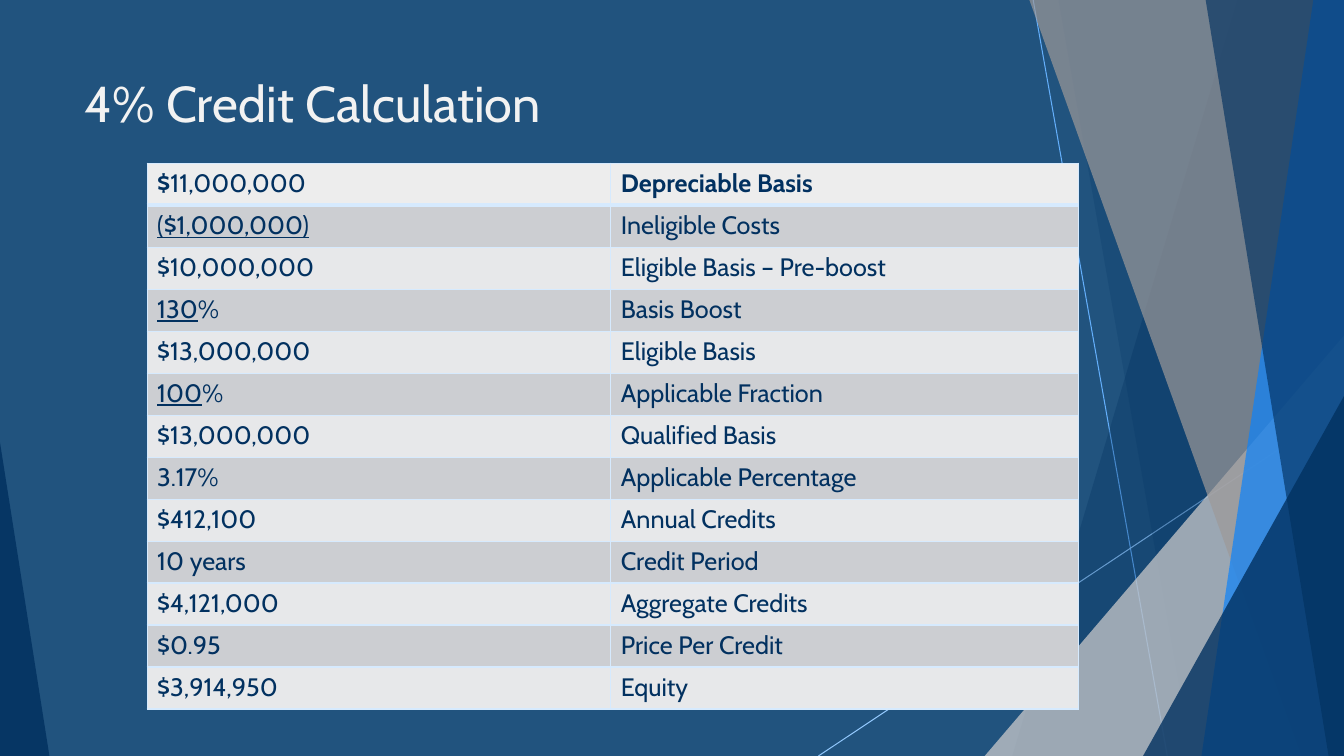
from lxml import etree
from pptx import Presentation
from pptx.dml.color import RGBColor
from pptx.enum import shapes
from pptx.oxml import ns
from pptx.util import Pt

FONT = "Cabin"
BACKGROUND = RGBColor(0x21, 0x53, 0x7E)
NAVY = RGBColor(0x02, 0x31, 0x60)
BLUE = RGBColor(0x0D, 0x83, 0xFA)
SILVER = RGBColor(0xD0, 0xCE, 0xCE)
GRAY = RGBColor(0x9D, 0x99, 0x99)
SKY = RGBColor(0x64, 0xAF, 0xFB)
PALE_SKY = RGBColor(0x91, 0xC7, 0xFC)
TITLE_COLOR = RGBColor(0xF2, 0xF2, 0xF2)
HEADER_FILL = RGBColor(0xED, 0xED, 0xED)
DARK_BAND = RGBColor(0xCC, 0xCE, 0xD2)
LIGHT_BAND = RGBColor(0xE7, 0xE8, 0xEA)
BORDER = RGBColor(0xD6, 0xEA, 0xFE)

WIDTH, HEIGHT = 960, 540
TITLE = "4% Credit Calculation"
ROWS = [
    ([("$", "b"), ("11,000,000", "")], [("Depreciable Basis", "b")]),
    ([("($1,000,000)", "u")], [("Ineligible Costs", "")]),
    ([("$10,000,000", "")], [("Eligible Basis – Pre-boost", "")]),
    ([("130", "u"), ("%", "")], [("Basis Boost", "")]),
    ([("$13,000,000", "")], [("Eligible Basis", "")]),
    ([("100", "u"), ("%", "")], [("Applicable Fraction", "")]),
    ([("$13,000,000", "")], [("Qualified Basis", "")]),
    ([("3.17%", "")], [("Applicable Percentage", "")]),
    ([("$412,100", "")], [("Annual Credits", "")]),
    ([("10 years", "")], [("Credit Period", "")]),
    ([("$4,121,000", "")], [("Aggregate Credits", "")]),
    ([("$0.95", "")], [("Price Per Credit", "")]),
    ([("$3,914,950", "")], [("Equity", "")]),
]
COLUMN_WIDTHS = (331.2, 334.2)
ROW_HEIGHT = 30
TABLE_LEFT, TABLE_TOP = 105.1, 116.6

LINES = [
    ((738, 0), (833.8, HEIGHT), SKY),
    ((WIDTH, 290), (584.6, HEIGHT), PALE_SKY),
]
SHARDS = [
    ("band", (884.2, 723), NAVY, 30),
    ("band", (756, 851), NAVY, 20),
    ("triangle", (703.4, 239.8, 256.6, 1), SILVER, 72),
    ("band", (735.1, 929.5), GRAY, 70),
    ("band", (938.2, 858.2), BLUE, 70),
    ("band", (861.1, 949), NAVY, 65),
    ("triangle", (816.5, 283, 143.5, 1), NAVY, 80),
    ("triangle", (0, 316.1, 35.3, 0), NAVY, 85),
]


def add_line(s, start, end, color):
    line = s.shapes.add_connector(
        shapes.MSO_CONNECTOR.STRAIGHT, *map(Pt, start + end))
    line.line.color.rgb = color
    line.line.width = Pt(0.75)
    etree.SubElement(line._element.spPr, ns.qn("a:effectLst"))


def add_shard(s, kind, place, color, opacity):
    if kind == "band":
        top_x, bottom_x = place
        outline = s.shapes.build_freeform(Pt(top_x), Pt(-0.6))
        corners = [(WIDTH, -0.6), (WIDTH, HEIGHT), (bottom_x, HEIGHT)]
        outline.add_line_segments([(Pt(x), Pt(y)) for x, y in corners])
        sp = outline.convert_to_shape()
    else:
        left, top, width, apex = place
        sp = s.shapes.add_shape(
            shapes.MSO_SHAPE.ISOSCELES_TRIANGLE,
            Pt(left), Pt(top), Pt(width), Pt(HEIGHT - top))
        sp.adjustments[0] = apex
    sp.shadow.inherit = False
    sp.fill.solid()
    sp.fill.fore_color.rgb = color
    sp.line.fill.background()
    clr = sp._element.spPr.find(".//" + ns.qn("a:srgbClr"))
    etree.SubElement(clr, ns.qn("a:alpha"), val=str(opacity * 1000))


def add_run(p, content, size, color):
    r = p.add_run()
    r.text = content
    r.font.name = FONT
    r.font.size = Pt(size)
    r.font.color.rgb = color
    return r


def set_borders(cell, widths):
    tc_pr = cell._tc.get_or_add_tcPr()
    for side, width in widths.items():
        ln = etree.SubElement(tc_pr, ns.qn("a:ln" + side), w=str(Pt(width)))
        fill = etree.SubElement(ln, ns.qn("a:solidFill"))
        etree.SubElement(fill, ns.qn("a:srgbClr"), val=str(BORDER))


def add_credit_table(s):
    frame = s.shapes.add_table(
        len(ROWS), len(COLUMN_WIDTHS), Pt(TABLE_LEFT), Pt(TABLE_TOP),
        Pt(sum(COLUMN_WIDTHS)), Pt(ROW_HEIGHT * len(ROWS)))
    table = frame.table
    table.first_row = table.horz_banding = False
    for column, width in zip(table.columns, COLUMN_WIDTHS):
        column.width = Pt(width)
    for i, row in enumerate(ROWS):
        table.rows[i].height = Pt(ROW_HEIGHT)
        band = DARK_BAND if i % 2 else LIGHT_BAND
        for j, runs in enumerate(row):
            cell = table.cell(i, j)
            set_borders(cell, {"L": 1, "R": 1, "T": 3 if i == 1 else 1,
                               "B": 3 if i == 0 else 1})
            cell.fill.solid()
            cell.fill.fore_color.rgb = band if i else HEADER_FILL
            for content, style in runs:
                r = add_run(cell.text_frame.paragraphs[0], content, 18, NAVY)
                r.font.bold = style == "b"
                r.font.underline = style == "u"


def main():
    prs = Presentation()
    prs.slide_width, prs.slide_height = Pt(WIDTH), Pt(HEIGHT)
    s = prs.slides.add_slide(prs.slide_layouts[6])
    s.background.fill.solid()
    s.background.fill.fore_color.rgb = BACKGROUND
    for line in LINES:
        add_line(s, *line)
    for shard in SHARDS:
        add_shard(s, *shard)
    title = s.shapes.add_textbox(Pt(53.3), Pt(48.2), Pt(676.8), Pt(103.7))
    tf = title.text_frame
    tf.word_wrap = True
    add_run(tf.paragraphs[0], TITLE, 36, TITLE_COLOR)
    add_credit_table(s)
    prs.save("out.pptx")


if __name__ == "__main__":
    main()
